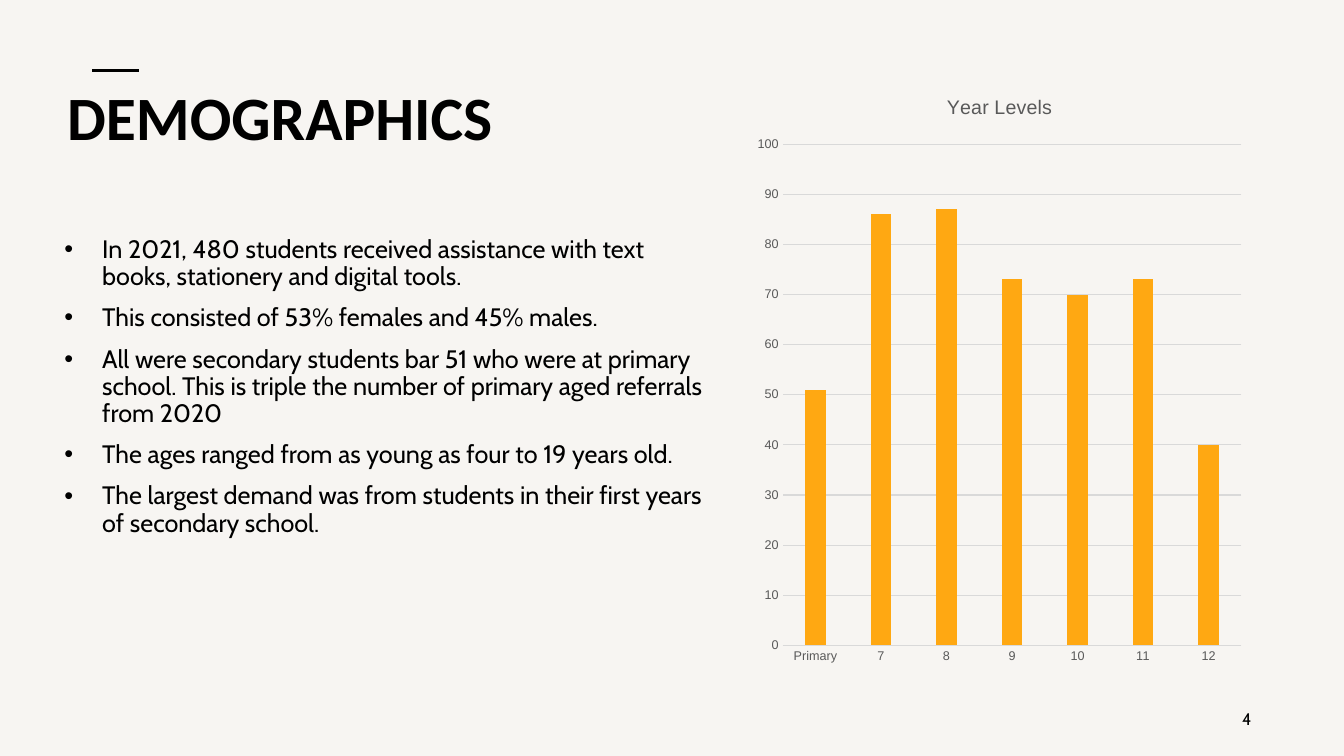
from lxml import etree
from pptx import Presentation
from pptx.chart.data import CategoryChartData
from pptx.dml.color import RGBColor
from pptx.enum.chart import XL_CHART_TYPE, XL_TICK_MARK
from pptx.enum.shapes import MSO_CONNECTOR
from pptx.enum.text import MSO_ANCHOR, MSO_AUTO_SIZE, PP_ALIGN
from pptx.oxml.ns import qn
from pptx.util import Pt

BLACK = RGBColor(0x00, 0x00, 0x00)
CREAM = RGBColor(0xF7, 0xF5, 0xF2)
GREY = RGBColor(0x59, 0x59, 0x59)
GRID = RGBColor(0xD9, 0xD9, 0xD9)
ORANGE = RGBColor(0xFF, 0xA8, 0x12)

FACTS = [
    "In 2021, 480 students received assistance with text books, stationery and digital tools.",
    "This consisted of 53% females and 45% males.",
    "All were secondary students bar 51 who were at primary school. "
    "This is triple the number of primary aged referrals from 2020",
    "The ages ranged from as young as four to 19 years old.",
    "The largest demand was from students in their first years of secondary school.",
]
YEAR_LEVELS = {"Primary": 51, "7": 86, "8": 87, "9": 73, "10": 70, "11": 73, "12": 40}


def set_font(font, size, name, color=BLACK, bold=False):
    font.size, font.name, font.bold = Pt(size), name, bold
    font.color.rgb = color


def add_bullet(p, margin, hanging):
    pPr = p._p.get_or_add_pPr()
    pPr.set("marL", str(Pt(margin)))
    pPr.set("indent", str(-Pt(hanging)))
    etree.SubElement(pPr, qn("a:buFont"), typeface="Arial")
    etree.SubElement(pPr, qn("a:buChar"), char="•")


def write_text(sp, paragraphs, size, font="Cabin", bold=False, align=PP_ALIGN.LEFT,
               anchor=MSO_ANCHOR.TOP, line_spacing=1.0, gap=0, bulleted=False):
    tf = sp.text_frame
    tf.word_wrap, tf.auto_size, tf.vertical_anchor = True, MSO_AUTO_SIZE.NONE, anchor
    tf.margin_left = tf.margin_right = tf.margin_top = tf.margin_bottom = 0
    for i, text in enumerate(paragraphs):
        p = tf.add_paragraph() if i else tf.paragraphs[0]
        p.alignment, p.line_spacing = align, line_spacing
        p.space_before = Pt(gap if i else 0)
        if bulleted:
            add_bullet(p, 45, 27)
        r = p.add_run()
        r.text = text
        set_font(r.font, size, font, bold=bold)


def add_heading(slide, x, y, w, h):
    """Title with a short rule above it."""
    rule = slide.shapes.add_connector(
        MSO_CONNECTOR.STRAIGHT, Pt(x + 18), Pt(y - 11.5), Pt(x + 51.5), Pt(y - 11.5))
    rule.line.color.rgb, rule.line.width = BLACK, Pt(2.25)
    etree.SubElement(rule._element.spPr, qn("a:effectLst"))
    title = slide.shapes.title
    title.left, title.top, title.width, title.height = Pt(x), Pt(y), Pt(w), Pt(h)
    write_text(title, ["DEMOGRAPHICS"], 44, "Calibri", bold=True, line_spacing=0.9)


def add_facts(slide, x, y, w, h):
    box = slide.shapes.add_textbox(Pt(x), Pt(y), Pt(w), Pt(h))
    write_text(box, FACTS, 18, line_spacing=0.9, gap=10, bulleted=True)


def add_page_number(slide, x, y, w, h):
    box = slide.shapes.add_textbox(Pt(x), Pt(y), Pt(w), Pt(h))
    write_text(box, ["4"], 12, align=PP_ALIGN.RIGHT, anchor=MSO_ANCHOR.BOTTOM)


def add_year_chart(slide, x, y, w, h):
    data = CategoryChartData()
    data.categories = list(YEAR_LEVELS)
    data.add_series("Series 1", list(YEAR_LEVELS.values()))
    chart = slide.shapes.add_chart(
        XL_CHART_TYPE.COLUMN_CLUSTERED, Pt(x), Pt(y), Pt(w), Pt(h), data).chart
    set_font(chart.font, 10, "Arial")
    chart.has_legend = False
    chart.has_title = True
    p = chart.chart_title.text_frame.paragraphs[0]
    r = p.add_run()
    r.text = "Year Levels"
    set_font(r.font, 14, "Arial", GREY)
    chart.chart_title.include_in_layout = False

    plot = chart.plots[0]
    plot.gap_width, plot.overlap, plot.vary_by_categories = 219, -27, False
    fill = plot.series[0].format.fill
    fill.solid()
    fill.fore_color.rgb = ORANGE

    cat, val = chart.category_axis, chart.value_axis
    for axis in (cat, val):
        axis.major_tick_mark = axis.minor_tick_mark = XL_TICK_MARK.NONE
        set_font(axis.tick_labels.font, 9, "Arial", GREY)
    val.minimum_scale, val.maximum_scale, val.major_unit = 0, 100, 10
    val.has_major_gridlines = True
    val.format.line.fill.background()
    for line in (cat.format.line, val.major_gridlines.format.line):
        line.color.rgb, line.width = GRID, Pt(0.75)


def main():
    prs = Presentation()
    prs.slide_width, prs.slide_height = Pt(960), Pt(540)
    slide = prs.slides.add_slide(prs.slide_layouts[5])
    slide.background.fill.solid()
    slide.background.fill.fore_color.rgb = CREAM
    add_heading(slide, 48, 62, 384.5, 65.5)
    add_facts(slide, 28, 169, 479, 284)
    add_year_chart(slide, 534, 52.5, 360, 430.5)
    add_page_number(slide, 817, 500.5, 77, 20)
    prs.save("out.pptx")


if __name__ == "__main__":
    main()
